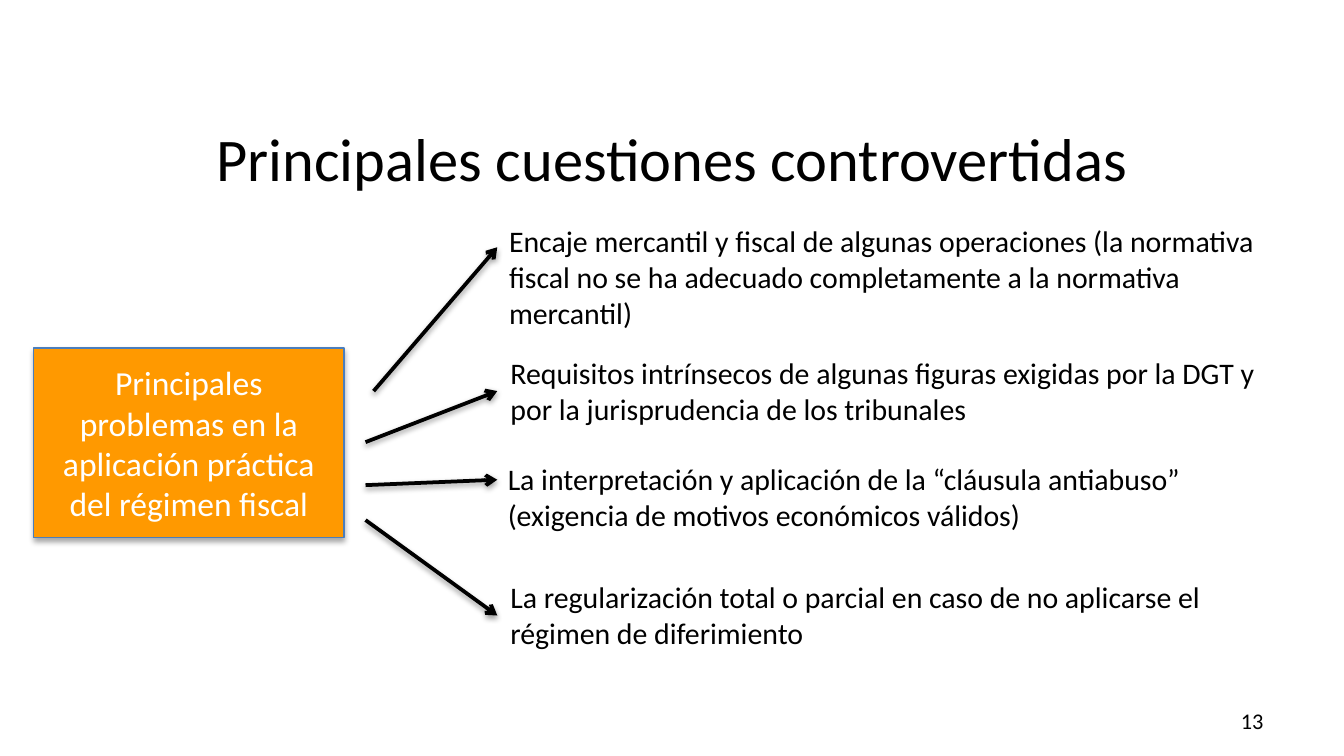
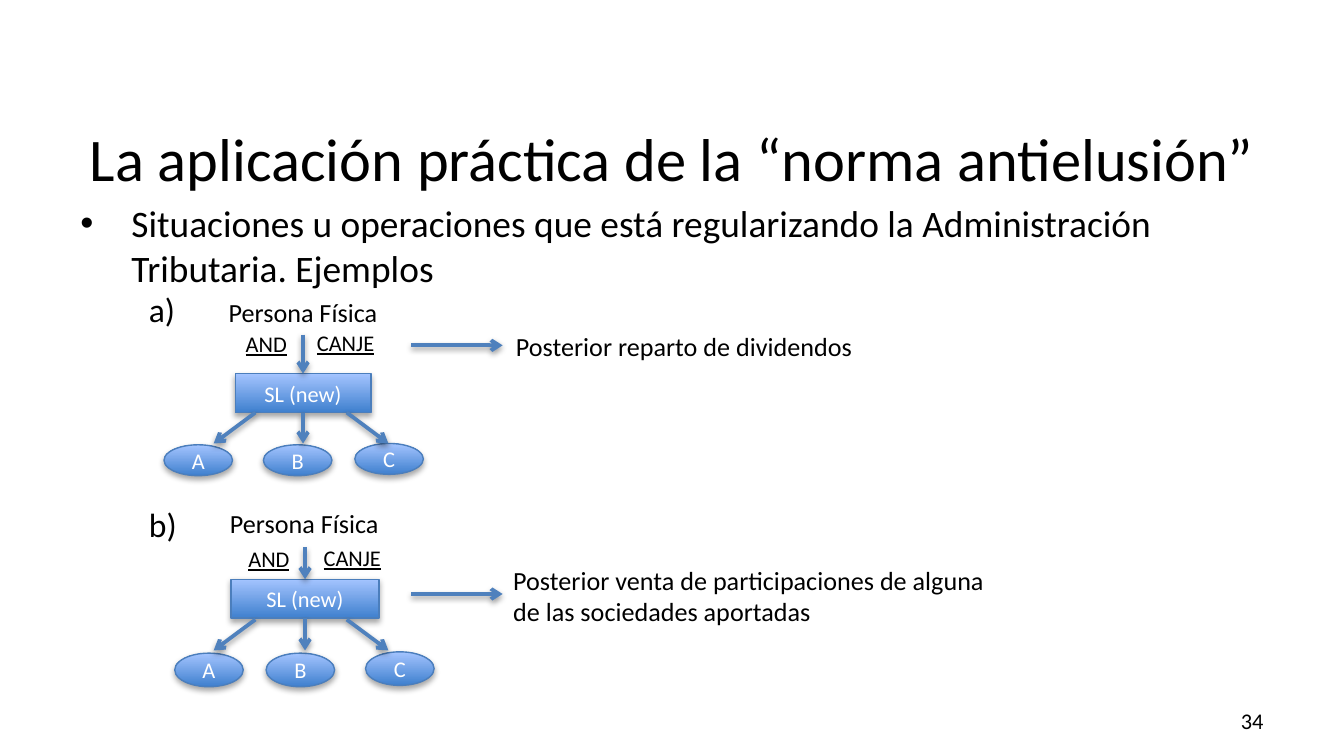
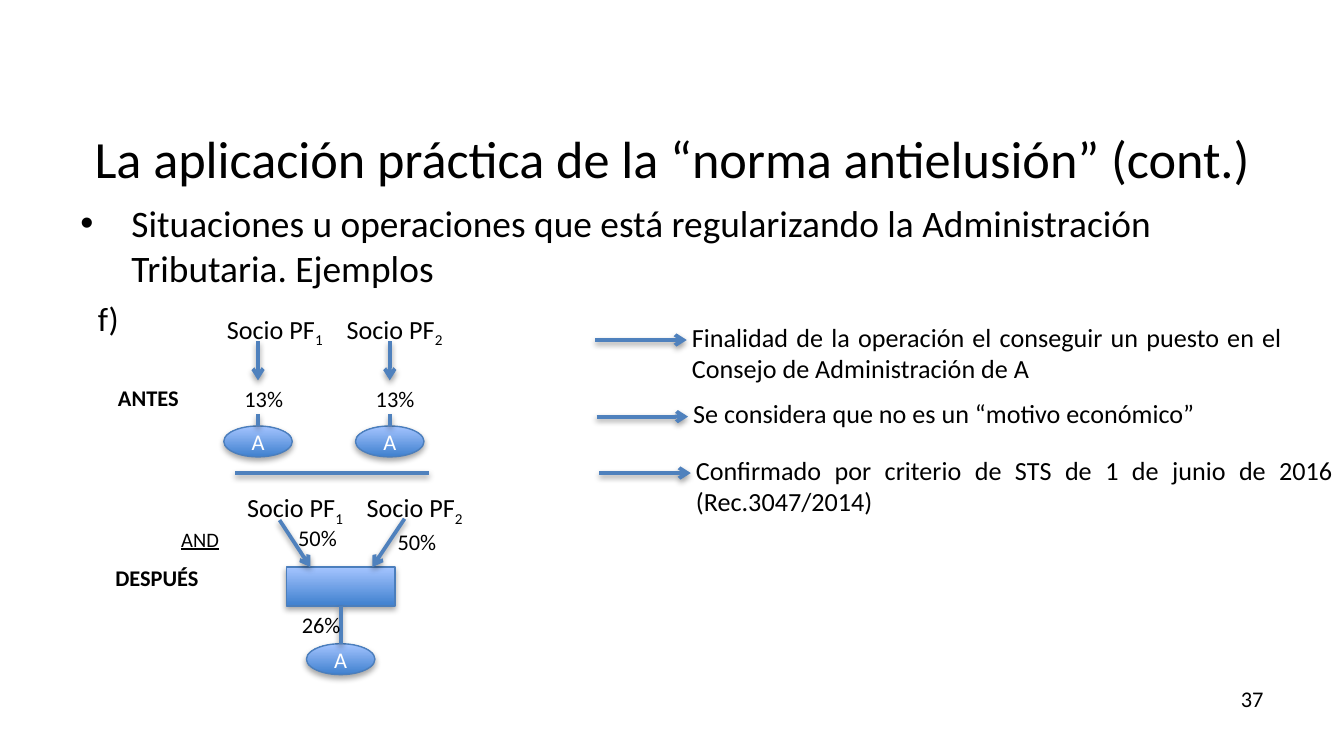
from dataclasses import dataclass

from lxml.etree import SubElement
from pptx import Presentation
from pptx.dml.color import RGBColor
from pptx.enum.shapes import MSO_CONNECTOR as Connector, MSO_SHAPE as Shape
from pptx.enum.text import MSO_ANCHOR as Anchor, MSO_AUTO_SIZE as AutoSize, PP_ALIGN as Align
from pptx.oxml.ns import qn
from pptx.util import Inches, Pt


@dataclass(frozen=True)
class Theme:
    font: str = "Calibri"
    ink: str = "000000"
    light: str = "FFFFFF"
    accent: str = "FF9900"
    arrow: str = "4F81BD"
    outline: str = "4B7EBC"
    gradient: tuple = ("3F80CE", "A4C4FF")
    title: float = 32.4
    title_long: float = 28
    lead: float = 20
    heading: float = 18
    item: float = 16
    note: float = 14
    small: float = 12
    tiny: float = 11
    outline_width: float = 0.75
    arrow_width: float = 2


LEAD = "Situaciones u operaciones que está regularizando la Administración Tributaria. Ejemplos"
OVAL_WIDTH, OVAL_HEIGHT, BOX_HEIGHT = 0.51, 0.23, 0.29


def color(value):
    return RGBColor.from_string(value)


def inches(*values):
    return [Inches(value) for value in values]


def place(box, left, top, width, height):
    box.left, box.top, box.width, box.height = inches(left, top, width, height)


def write(frame, text, theme, *, size, ink=None, align=None, bold=None,
          underline=None, subscript="", bullet=False):
    """Put one paragraph in the frame, with an optional subscript at its end."""
    frame.word_wrap = True
    para = frame.paragraphs[0]
    if align is not None:
        para.alignment = align
    if bullet:
        props = para._p.get_or_add_pPr()
        props.set("marL", str(Inches(0.38)))
        props.set("indent", str(Inches(-0.38)))
        SubElement(props, qn("a:buFont"), typeface="Arial")
        SubElement(props, qn("a:buChar"), char="•")
    for part, baseline in ((text, None), (subscript, "-25000")):
        if not part:
            continue
        span = para.add_run()
        span.text = part
        span.font.name, span.font.size = theme.font, Pt(size)
        span.font.bold, span.font.underline = bold, underline
        span.font.color.rgb = color(ink or theme.ink)
        if baseline:
            span._r.get_or_add_rPr().set("baseline", baseline)


def add_shadow(shape, opacity, distance):
    """Add a soft shadow below; call once fill and line are set."""
    effects = SubElement(shape._element.spPr, qn("a:effectLst"))
    outer = SubElement(effects, qn("a:outerShdw"), blurRad="40000", dist=str(distance),
                       dir="5400000", rotWithShape="0")
    tint = SubElement(outer, qn("a:srgbClr"), val="000000")
    SubElement(tint, qn("a:alpha"), val=str(opacity * 1000))


class Builder:
    def __init__(self, deck, theme):
        self.deck, self.theme, self.page = deck, theme, None

    def new_page(self, title, number, *, size=None, number_top=5.21, lead=None):
        theme = self.theme
        self.page = self.deck.slides.add_slide(self.deck.slide_layouts[5])
        box = self.page.shapes.title
        place(box, 0.5, 0.85, 9, 0.64)
        box.text_frame.vertical_anchor = Anchor.MIDDLE
        write(box.text_frame, title, theme, size=size or theme.title, align=Align.CENTER)
        if lead:
            self.text(lead, 0.5, 1.44, 9, 0.73, size=theme.lead, bullet=True, grow=False)
        self.text(number, 7.17, number_top, 2.33, 0.3, size=theme.small,
                  align=Align.RIGHT, anchor=Anchor.MIDDLE, grow=False)

    def text(self, text, left, top, width, height, *, size, anchor=Anchor.TOP,
             grow=True, **style):
        box = self.page.shapes.add_textbox(*inches(left, top, width, height))
        frame = box.text_frame
        write(frame, text, self.theme, size=size, **style)
        frame.vertical_anchor = anchor
        frame.auto_size = AutoSize.SHAPE_TO_FIT_TEXT if grow else AutoSize.NONE

    def label(self, text, left, top, width=0.56, *, size=None, **style):
        self.text(text, left, top, width, 0.3, size=size or self.theme.small, **style)

    def node(self, kind, text, left, top, width, height, *, fill=None, size=None):
        """Add a filled shape; without a fill colour it takes the theme gradient."""
        theme = self.theme
        shape = self.page.shapes.add_shape(kind, *inches(left, top, width, height))
        if fill:
            shape.fill.solid()
            shape.fill.fore_color.rgb = color(fill)
        else:
            shape.fill.gradient()
            shape.fill.gradient_angle = 90
            for stop, shade in zip(shape.fill.gradient_stops, theme.gradient):
                stop.color.rgb = color(shade)
        shape.line.color.rgb = color(theme.outline)
        shape.line.width = Pt(theme.outline_width)
        add_shadow(shape, 35, 23000)
        if text:
            shape.text_frame.vertical_anchor = Anchor.MIDDLE
            write(shape.text_frame, text, theme, size=size or theme.small,
                  ink=theme.light, align=Align.CENTER)
        return shape

    def oval(self, text, left, top, height=OVAL_HEIGHT):
        return self.node(Shape.OVAL, text, left, top, OVAL_WIDTH, height)

    def line(self, start, end, *, ink=None, arrow=True, source=None, target=None):
        """Draw a line; source is joined at its bottom and target at its top."""
        link = self.page.shapes.add_connector(Connector.STRAIGHT, *inches(*start, *end))
        if source is not None:
            link.begin_connect(source, 2)
        if target is not None:
            link.end_connect(target, 0)
        link.line.color.rgb = color(ink or self.theme.arrow)
        link.line.width = Pt(self.theme.arrow_width)
        if arrow:
            SubElement(link._element.spPr.find(qn("a:ln")), qn("a:tailEnd"), type="arrow")
        add_shadow(link, 38, 20000)

    def holding(self, letter, *, letter_top, person, box, ovals, oval_height, labels,
                arrow_top, arrows):
        """Draw a person who contributes companies A, B and C to a new holding."""
        theme = self.theme
        self.text(letter, 1.01, letter_top, 0.46, 0.4, size=theme.heading)
        self.text("Persona Física", *person, 1.63, 0.34, size=theme.note, align=Align.CENTER)
        left, top, width = box
        center = left + width / 2
        company = self.node(Shape.RECTANGLE, "SL (new)", left, top, width, BOX_HEIGHT)
        self.line((center, arrow_top), (center, top), target=company)
        for name, (oval_left, oval_top) in zip("ABC", ovals):
            self.oval(name, oval_left, oval_top, oval_height)
        for name, spot, label_width in zip(("AND", "CANJE"), labels, (0.56, 0.64)):
            self.label(name, *spot, label_width, underline=True)
        start, end = arrows
        self.line((1.9, start), (1.59, end))
        self.line((center, start), (center, end), source=company)
        self.line((2.58, start), (2.89, end))

    def partners(self, left, top):
        for number, offset, width in (("1", 0, 1.11), ("2", 0.9, 1.09)):
            self.text("Socio PF", left + offset, top, width, 0.34, size=self.theme.note,
                      align=Align.CENTER, subscript=number)


def add_issues(build):
    theme = build.theme
    build.new_page("Principales cuestiones controvertidas", "13")
    build.node(Shape.RECTANGLE,
               "Principales problemas en la aplicación práctica del régimen fiscal",
               0.25, 2.59, 2.31, 1.41, fill=theme.accent, size=theme.heading)
    issues = (
        ("Encaje mercantil y fiscal de algunas operaciones (la normativa fiscal no se ha "
         "adecuado completamente a la normativa mercantil)",
         3.69, 1.61, 0.91, (2.78, 2.91), 1.84),
        ("Requisitos intrínsecos de algunas figuras exigidas por la DGT y por la "
         "jurisprudencia de los tribunales", 3.7, 2.59, 0.64, (2.72, 3.29), 2.91),
        ("La interpretación y aplicación de la “cláusula antiabuso” (exigencia de motivos "
         "económicos válidos)", 3.68, 3.38, 0.64, (2.72, 3.61), 3.57),
        ("La regularización total o parcial en caso de no aplicarse el régimen de "
         "diferimiento", 3.7, 4.26, 0.64, (2.72, 3.87), 4.58),
    )
    for issue, left, top, height, start, end in issues:
        build.text(issue, left, top, 5.94, height, size=theme.item)
        build.line(start, (3.7, end), ink=theme.ink)


def add_holdings(build):
    build.new_page("La aplicación práctica de la “norma antielusión”", "34", lead=LEAD)
    build.holding("a)", letter_top=2.1, person=(1.44, 2.16), box=(1.75, 2.78, 1.01),
                  ovals=((1.22, 3.31), (1.96, 3.31), (2.64, 3.3)), oval_height=OVAL_HEIGHT,
                  labels=((1.73, 2.41), (2.26, 2.4)), arrow_top=2.49, arrows=(3.07, 3.3))
    build.holding("b)", letter_top=3.7, person=(1.45, 3.73), box=(1.72, 4.31, 1.1),
                  ovals=((1.3, 4.86), (1.98, 4.86), (2.72, 4.85)), oval_height=0.25,
                  labels=((1.75, 4.01), (2.31, 4)), arrow_top=4.07, arrows=(4.61, 4.84))
    outcomes = (
        ("Posterior reparto de dividendos", 3.74, 2.41, 2.96, 0.34, 2.57),
        ("Posterior venta de participaciones de alguna de las sociedades aportadas",
         3.72, 4.15, 3.84, 0.57, 4.42),
    )
    for outcome, left, top, width, height, level in outcomes:
        build.text(outcome, left, top, width, height, size=build.theme.note)
        build.line((3.06, level), (3.74, level))


def add_partners(build):
    theme = build.theme
    build.new_page("La aplicación práctica de la “norma antielusión” (cont.)", "37",
                   size=theme.title_long, number_top=5.05, lead=LEAD)
    build.text("f)", 0.63, 2.17, 0.46, 0.4, size=theme.heading)
    reasons = (
        ("Finalidad de la operación el conseguir un puesto en el Consejo de Administración "
         "de A", 5.05, 2.34, 4.59, 0.57),
        ("Se considera que no es un “motivo económico”", 5.06, 2.91, 4.94, 0.34),
        ("Confirmado por criterio de STS de 1 de junio de 2016 (Rec.3047/2014)",
         5.08, 3.33, 4.94, 0.57),
    )
    for reason, left, top, width, height in reasons:
        build.text(reason, left, top, width, height, size=theme.note, align=Align.JUSTIFY)
        build.line((left - 0.62, top + 0.19), (left + 0.06, top + 0.19))

    build.label("ANTES", 0.78, 2.81, 0.66, bold=True)
    build.partners(1.49, 2.28)
    for center, share_left, align in ((1.92, 1.72, Align.LEFT), (2.9, 2.66, Align.CENTER)):
        build.line((center, 2.54), (center, 2.83))
        build.label("13%", share_left, 2.82, align=align)
        company = build.oval("A", center - OVAL_WIDTH / 2, 3.17)
        build.line((center, 3.08), (center, 3.17), arrow=False, target=company)
    build.line((1.75, 3.52), (3.19, 3.52), arrow=False)

    build.label("DESPUÉS", 0.76, 4.15, 0.86, bold=True)
    build.label("AND", 1.25, 3.87, size=theme.tiny, underline=True)
    build.partners(1.64, 3.61)
    holding = build.node(Shape.RECTANGLE, "", 2.13, 4.22, 0.81, BOX_HEIGHT)
    company = build.oval("A", 2.28, 4.79)
    build.line((2.54, 4.51), (2.54, 4.79), arrow=False, source=holding, target=company)
    build.label("26%", 2.11, 4.5, align=Align.CENTER)
    build.line((2.08, 3.87), (2.31, 4.22))
    build.line((3.01, 3.86), (2.77, 4.22))
    build.label("50%", 2.12, 3.85)
    build.label("50%", 2.86, 3.88)


def main():
    deck = Presentation()
    deck.slide_width = Inches(10)
    deck.slide_height = deck.slide_width * 9 // 16
    build = Builder(deck, Theme())
    add_issues(build)
    add_holdings(build)
    add_partners(build)
    deck.save("out.pptx")


if __name__ == "__main__":
    main()
